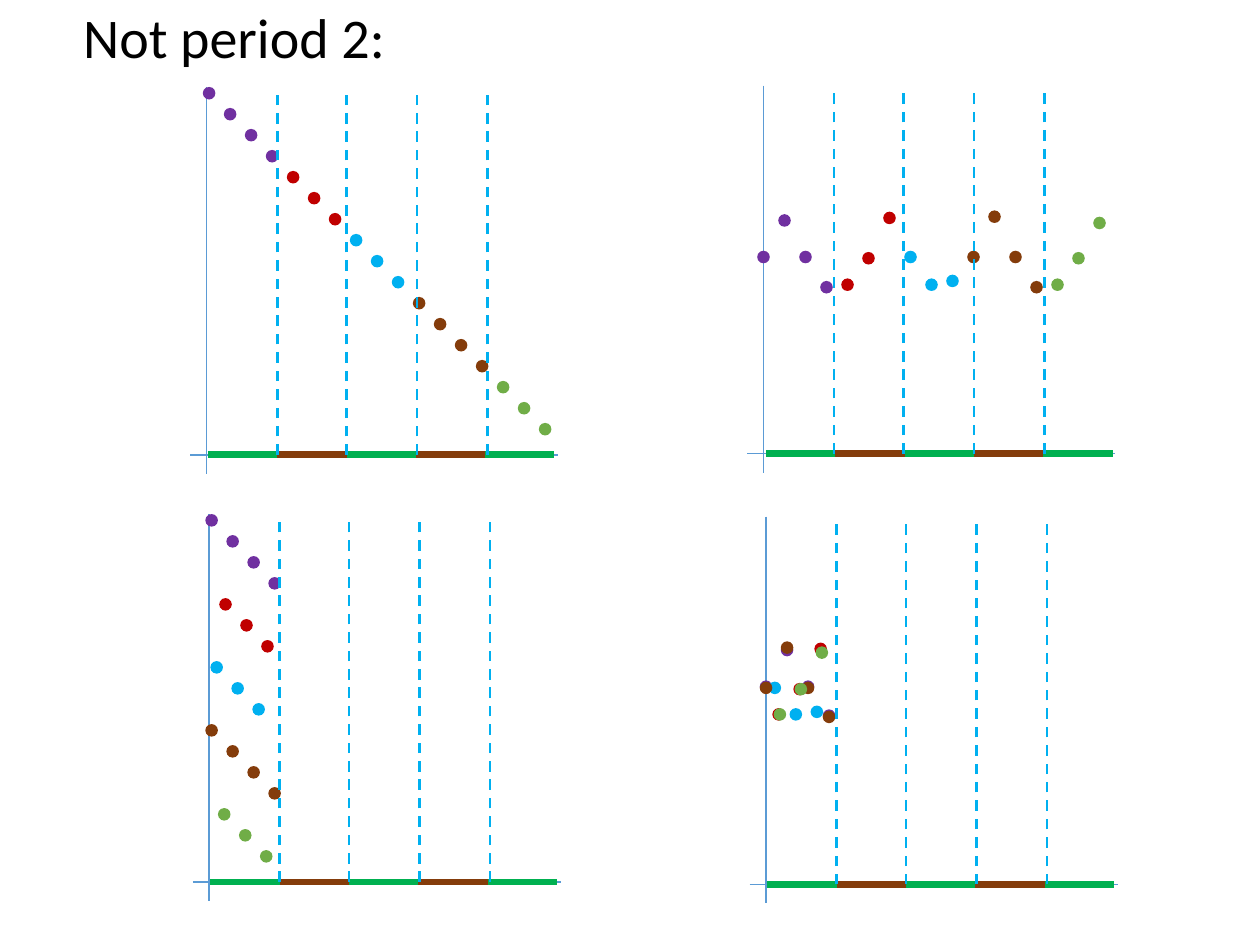
from lxml import etree
from pptx import Presentation
from pptx.dml.color import RGBColor
from pptx.enum.dml import MSO_LINE
from pptx.enum.shapes import MSO_CONNECTOR, MSO_SHAPE
from pptx.enum.text import MSO_ANCHOR, PP_ALIGN
from pptx.oxml.ns import qn
from pptx.util import Inches, Pt

STRAIGHT = MSO_CONNECTOR.STRAIGHT
OVAL = MSO_SHAPE.OVAL
DASH = MSO_LINE.DASH
TOP = MSO_ANCHOR.TOP
LEFT = PP_ALIGN.LEFT

AXIS, GUIDE, GREEN, BROWN = "5B9BD5", "00B0F0", "00B050", "843C0B"

# Samples are grouped by the period window they fall in
GROUPS = [("7030A0", 4), ("C00000", 3), ("00B0F0", 3), ("843C0B", 4), ("70AD47", 3)]
STEP = 1 / 6
DOT = 0.1
PERIOD = 0.55
GUIDE_OFFSETS = [0.56, 1.11, 1.67, 2.23]
BASELINE = 2.92

# Group starts along x: laid end to end, or folded into the first window
UNFOLDED = [STEP * index for index in (0, 4, 7, 10, 14)]
FOLDED_RAMP = [0, 0.11, 0.04, 0, 0.1]
FOLDED_WAVE = [0, 0.1, 0.07, 0, 0.11]

# Dot tops below the top of the chart
RAMP = [STEP * index for index in range(17)]
WAVE = [1.31, 1.02, 1.31, 1.55, 1.53, 1.32, 1, 1.31, 1.53,
        1.5, 1.31, 0.99, 1.31, 1.55, 1.53, 1.32, 1.04]
# Folded dots differ slightly in height, so that each one shows
OVERLAID_WAVE = [1.3, 1.01, 1.3, 1.53, 1.52, 1.32, 1, 1.31, 1.52,
                 1.5, 1.31, 0.99, 1.31, 1.54, 1.52, 1.32, 1.03]

# Each chart: axis left, top, inset of strips, shift of dots, group starts, heights
CHARTS = [
    (1.66, 4.08, 0.01, -0.03, FOLDED_RAMP, RAMP),
    (6.06, 0.68, 0.02, -0.05, UNFOLDED, WAVE),
    (6.08, 4.1, 0.01, -0.05, FOLDED_WAVE, OVERLAID_WAVE),
    (1.64, 0.69, 0.01, -0.03, UNFOLDED, RAMP),
]


def color(value):
    return RGBColor.from_string(value)


def add_line(shapes, start, end, line_color, width, dash=None):
    line = shapes.add_connector(STRAIGHT, *map(Inches, start + end))
    line.line.color.rgb = color(line_color)
    line.line.width = Pt(width)
    if dash is not None:
        line.line.dash_style = dash
    etree.SubElement(line._element.spPr, qn("a:effectLst"))


def add_dot(shapes, left, top, fill):
    dot = shapes.add_shape(OVAL, *map(Inches, (left, top, DOT, DOT)))
    dot.shadow.inherit = False
    dot.fill.solid()
    dot.fill.fore_color.rgb = color(fill)
    dot.line.fill.background()


def add_chart_group(slide, left, top, inset, dot_shift, starts, heights):
    shapes = slide.shapes.add_group_shape().shapes
    base = top + BASELINE

    # Axes
    add_line(shapes, (left, top), (left, top + 3.07), AXIS, 1)
    add_line(shapes, (left - 0.13, base), (left + 2.79, base), AXIS, 1)

    # Samples
    remaining = iter(heights)
    for (fill, count), start in zip(GROUPS, starts):
        for index in range(count):
            dot_left = left + dot_shift + start + STEP * index
            add_dot(shapes, dot_left, top + next(remaining), fill)

    # Alternating period strips
    for index in range(5):
        strip_left = left + inset + PERIOD * index
        strip_color = BROWN if index % 2 else GREEN
        add_line(shapes, (strip_left, base), (strip_left + PERIOD, base), strip_color, 4)

    # Period guides
    for offset in GUIDE_OFFSETS:
        x = left + offset
        add_line(shapes, (x, base), (x, top + 0.05), GUIDE, 1.5, DASH)


def add_title(slide, left, top, width, height):
    title = slide.shapes.title
    box = {"left": left, "top": top, "width": width, "height": height}
    for name, value in box.items():
        setattr(title, name, Inches(value))
    frame = title.text_frame
    frame.text = "Not period 2:"
    frame_format = {"word_wrap": True, "vertical_anchor": TOP, "margin_top": Inches(0.02)}
    for name, value in frame_format.items():
        setattr(frame, name, value)
    paragraph = frame.paragraphs[0]
    paragraph.alignment = LEFT
    font = paragraph.runs[0].font
    for name, value in {"name": "Calibri", "size": Pt(32)}.items():
        setattr(font, name, value)
    font.color.rgb = color("000000")


def main():
    presentation = Presentation()
    presentation.slide_width = Inches(10)
    presentation.slide_height = Inches(7.5)
    slide = presentation.slides.add_slide(presentation.slide_layouts[5])
    add_title(slide, 0.56, 0, 8.41, 0.61)
    for chart in CHARTS:
        add_chart_group(slide, *chart)
    presentation.save("out.pptx")


if __name__ == "__main__":
    main()
